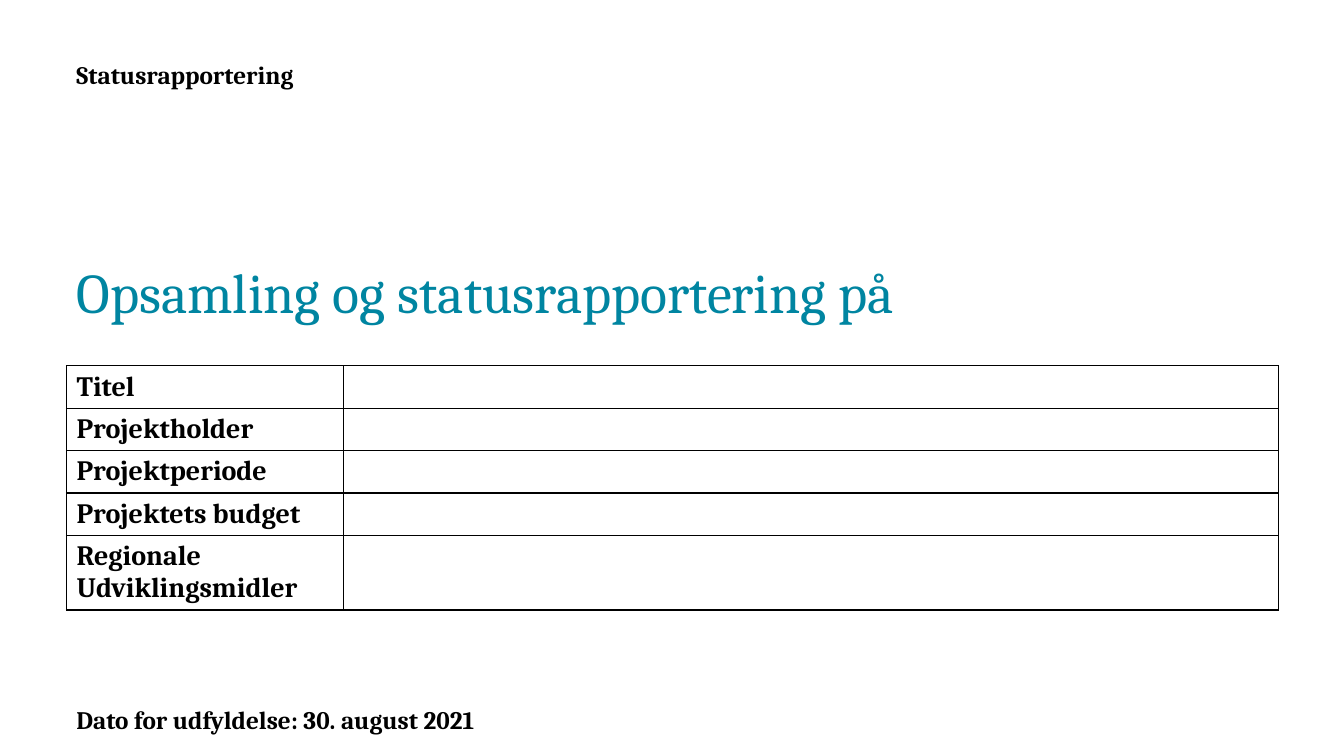
from dataclasses import dataclass

from lxml import etree
from pptx import Presentation
from pptx.dml.color import RGBColor
from pptx.enum.text import MSO_ANCHOR, MSO_AUTO_SIZE, PP_ALIGN
from pptx.oxml.ns import qn
from pptx.util import Inches, Pt

TOP = MSO_ANCHOR.TOP
MIDDLE = MSO_ANCHOR.MIDDLE
LEFT = PP_ALIGN.LEFT
NO_AUTOFIT = MSO_AUTO_SIZE.NONE
TITLE_ONLY = 5


@dataclass(frozen=True)
class Theme:
    font: str = "Cambria"
    title_color: str = "0085A1"
    text_color: str = "000000"
    title_size: int = 40
    table_size: int = 20
    label_size: int = 18
    border_width: int = 1


THEME = Theme()
FIELDS = [
    "Titel",
    "Projektholder",
    "Projektperiode",
    "Projektets budget",
    "Regionale Udviklingsmidler",
]


def style_paragraph(paragraph, size, color, bold):
    paragraph.alignment = LEFT
    font = paragraph.font
    font.name = THEME.font
    font.size = Pt(size)
    font.bold = bold
    font.color.rgb = RGBColor.from_string(color)


def place_title(slide, text, left, top, width, height):
    title = slide.shapes.title
    title.left, title.top = Inches(left), Inches(top)
    title.width, title.height = Inches(width), Inches(height)
    frame = title.text_frame
    frame.text = text
    frame.word_wrap = True
    frame.auto_size = NO_AUTOFIT
    frame.vertical_anchor = TOP
    paragraph = frame.paragraphs[0]
    paragraph.line_spacing = Pt(THEME.title_size)
    style_paragraph(paragraph, THEME.title_size, THEME.title_color, False)


def add_label(slide, text, left, top, width, height):
    box = slide.shapes.add_textbox(
        Inches(left), Inches(top), Inches(width), Inches(height)
    )
    frame = box.text_frame
    frame.text = text
    frame.word_wrap = True
    frame.vertical_anchor = MIDDLE
    style_paragraph(frame.paragraphs[0], THEME.label_size, THEME.text_color, True)


def add_borders(cell):
    properties = cell._tc.get_or_add_tcPr()
    for side in ("a:lnL", "a:lnR", "a:lnT", "a:lnB"):
        line = etree.SubElement(properties, qn(side), w=str(Pt(THEME.border_width)))
        fill = etree.SubElement(line, qn("a:solidFill"))
        etree.SubElement(fill, qn("a:srgbClr"), val=THEME.text_color)


def add_project_table(slide, fields, left, top, column_widths, row_height):
    table = slide.shapes.add_table(
        len(fields),
        len(column_widths),
        Inches(left),
        Inches(top),
        Inches(sum(column_widths)),
        Inches(row_height * len(fields)),
    ).table
    table.first_row = False
    table.horz_banding = False
    for column, width in zip(table.columns, column_widths):
        column.width = Inches(width)
    for row, field in zip(table.rows, fields):
        row.height = Inches(row_height)
        row.cells[0].text = field
        for cell in row.cells:
            add_borders(cell)
            cell.fill.background()
            style_paragraph(
                cell.text_frame.paragraphs[0],
                THEME.table_size,
                THEME.text_color,
                True,
            )


def build_cover(slide, left):
    place_title(slide, "Opsamling og statusrapportering på", left, 2.62, 9.93, 1.19)
    add_project_table(slide, FIELDS, left, 3.63, [2.75, 9.27], 0.41)
    add_label(slide, "Dato for udfyldelse: 30. august 2021", left, 6.94, 5.27, 0.4)
    add_label(slide, "Statusrapportering", left, 0.54, 2.71, 0.4)


def main():
    presentation = Presentation()
    presentation.slide_width = Inches(13.33)
    presentation.slide_height = Inches(7.5)
    slide = presentation.slides.add_slide(presentation.slide_layouts[TITLE_ONLY])
    build_cover(slide, 0.66)
    presentation.save("out.pptx")


if __name__ == "__main__":
    main()
